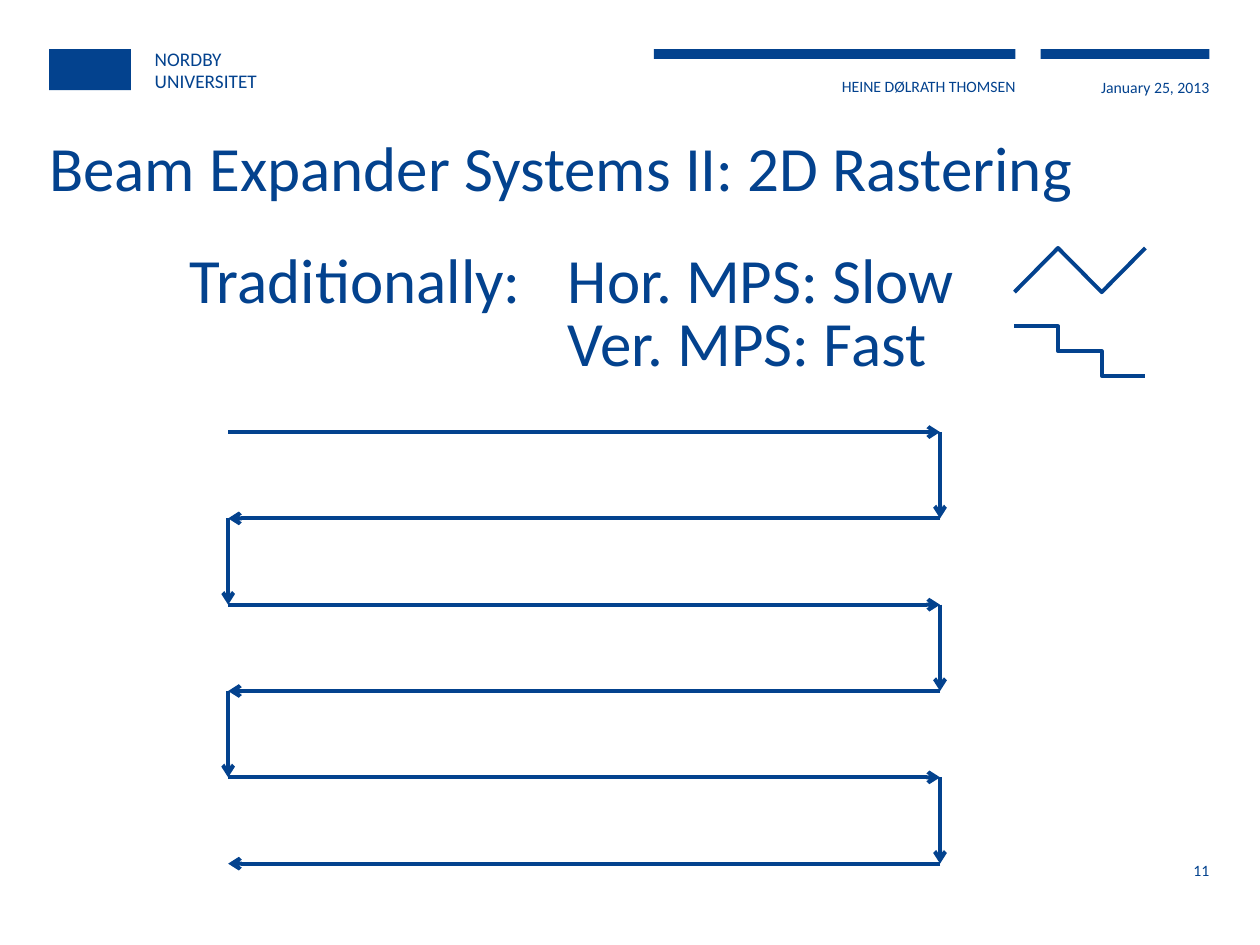
from lxml.etree import SubElement
from pptx import Presentation
from pptx.dml.color import RGBColor
from pptx.enum.shapes import MSO_CONNECTOR as Connector, MSO_SHAPE as Shape
from pptx.enum.text import MSO_ANCHOR as Anchor, PP_ALIGN as Align
from pptx.oxml.ns import qn
from pptx.util import Cm, Pt

BLUE = RGBColor(0x03, 0x42, 0x8E)
FONT = "Calibri"
LEFT, RIGHT, TOP = 0.99, 24.38, 0.99


class SlideBuilder:
    """Draws elements on one slide in a shared style; lengths are in cm."""

    def __init__(self, slide, color=BLUE, font=FONT, line_width=Pt(2.25)):
        self.slide = slide
        self.color = color
        self.font = font
        self.line_width = line_width

    def bar(self, left, top, width, height):
        shape = self.slide.shapes.add_shape(
            Shape.RECTANGLE, Cm(left), Cm(top), Cm(width), Cm(height))
        shape.shadow.inherit = False
        shape.fill.solid()
        shape.fill.fore_color.rgb = self.color
        shape.line.fill.background()

    def text(self, text, left, top, width, height, *, size=9, spacing=1.02,
             align=Align.LEFT, anchor=Anchor.BOTTOM, insets=(0, 0), tab=None):
        """Add a text box; insets are (horizontal, vertical), tab is a stop."""
        box = self.slide.shapes.add_textbox(
            Cm(left), Cm(top), Cm(width), Cm(height))
        frame = box.text_frame
        frame.word_wrap = True
        frame.vertical_anchor = anchor
        frame.margin_left = frame.margin_right = Cm(insets[0])
        frame.margin_top = frame.margin_bottom = Cm(insets[1])
        frame.text = text
        for paragraph in frame.paragraphs:
            paragraph.alignment = align
            paragraph.line_spacing = spacing
            for run in paragraph.runs:
                run.font.name = self.font
                run.font.size = Pt(size)
                run.font.color.rgb = self.color
            if tab:
                properties = paragraph._p.get_or_add_pPr()
                stops = SubElement(properties, qn("a:tabLst"))
                SubElement(stops, qn("a:tab"), pos=str(Cm(tab)), algn="l")

    def connector(self, start, end, kind=Connector.STRAIGHT, arrow=False):
        line = self.slide.shapes.add_connector(
            kind, *(Cm(value) for value in (*start, *end)))
        self.stroke(line)
        if arrow:
            SubElement(line.line._get_or_add_ln(), qn("a:tailEnd"), type="arrow")
        SubElement(line.element.spPr, qn("a:effectLst"))

    def polyline(self, points):
        first, *others = [(Cm(x), Cm(y)) for x, y in points]
        builder = self.slide.shapes.build_freeform(*first)
        builder.add_line_segments(others, close=False)
        shape = builder.convert_to_shape()
        shape.shadow.inherit = False
        shape.fill.background()
        self.stroke(shape)

    def stroke(self, shape):
        shape.line.color.rgb = self.color
        shape.line.width = self.line_width


def draw_header(builder):
    builder.bar(20.98, TOP, 3.4, 0.2)
    builder.bar(13.18, TOP, 7.29, 0.2)
    builder.bar(LEFT, TOP, 1.65, 0.83)
    builder.text("HEINE DØLRATH THOMSEN", 13.23, 1.52, 7.24, 0.41,
                 align=Align.RIGHT)
    builder.text("January 25, 2013", 20.98, 1.54, 3.4, 0.41, align=Align.RIGHT)
    builder.text("NORDBY\nUNIVERSITET", 3.12, 0.51, 5.66, 1.37,
                 size=11, spacing=0.95)


def draw_raster(builder):
    """Draw a scan path that runs back and forth, one row below the other."""
    left, right, top, step, rows = 4.6, 18.95, 8.71, 1.74, 6
    points = []
    for row in range(rows):
        ends = (left, right) if row % 2 == 0 else (right, left)
        points += [(x, top + row * step) for x in ends]
    for start, end in zip(points, points[1:]):
        builder.connector(start, end, arrow=True)


def draw_waveforms(builder):
    left, step = 20.45, 0.88
    low, high = 5.89, 5.0
    builder.polyline([(left + index * step, high if index % 2 else low)
                      for index in range(4)])
    stair_top, drop = 6.58, 0.5
    for index in range(2):
        x, y = left + index * step, stair_top + index * drop
        builder.connector((x, y), (x + 2 * step, y + drop), Connector.ELBOW)


def main():
    presentation = Presentation()
    presentation.slide_width, presentation.slide_height = Cm(25.4), Cm(19.05)
    slide = presentation.slides.add_slide(presentation.slide_layouts[6])
    builder = SlideBuilder(slide)

    draw_header(builder)
    builder.text("Beam Expander Systems II: 2D Rastering", LEFT, 2.72,
                 RIGHT - LEFT, 1.4, size=36, spacing=0.83)
    builder.text("11", 18.47, 17.35, 5.91, 0.38,
                 align=Align.RIGHT, anchor=Anchor.TOP)
    draw_raster(builder)
    builder.text("Traditionally:\tHor. MPS: Slow\n\tVer. MPS: Fast",
                 3.58, 4.98, 16.87, 2.82, size=36, spacing=Pt(36),
                 anchor=Anchor.TOP, insets=(0.25, 0.13), tab=7.62)
    draw_waveforms(builder)

    presentation.save("out.pptx")


if __name__ == "__main__":
    main()
